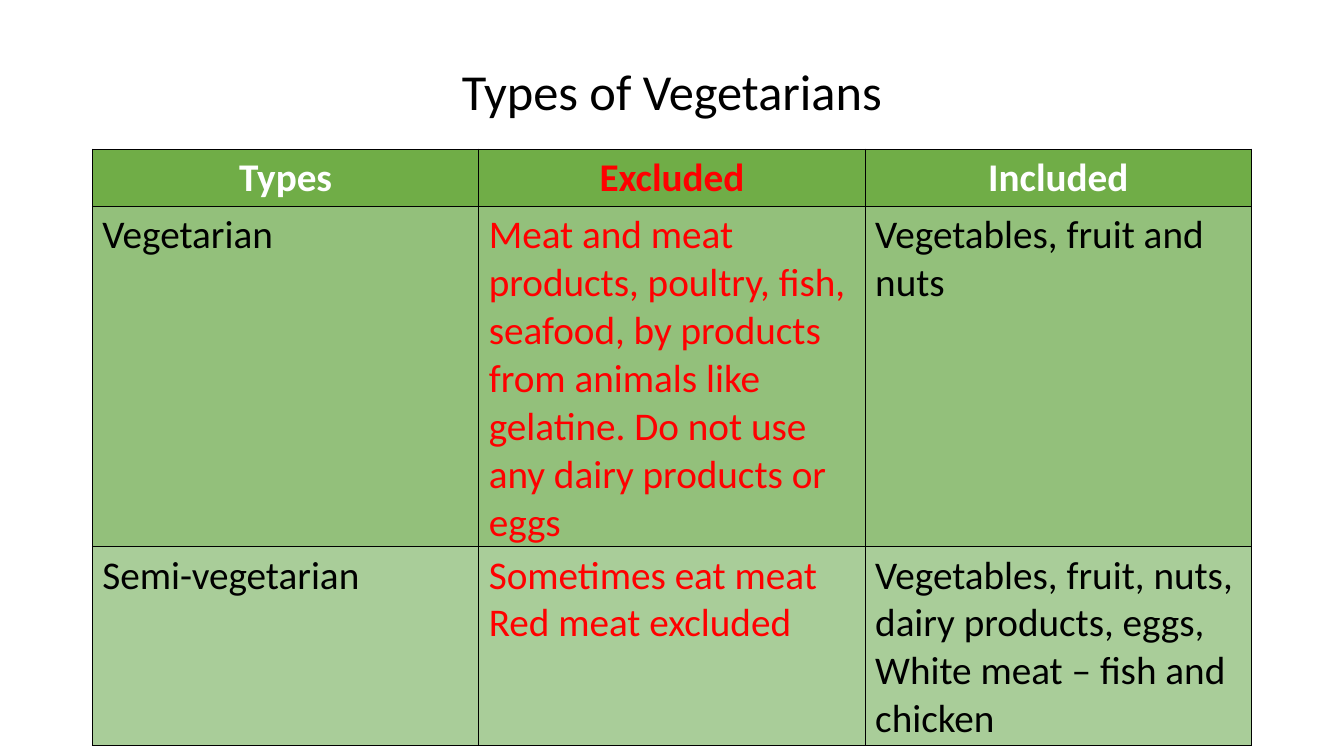
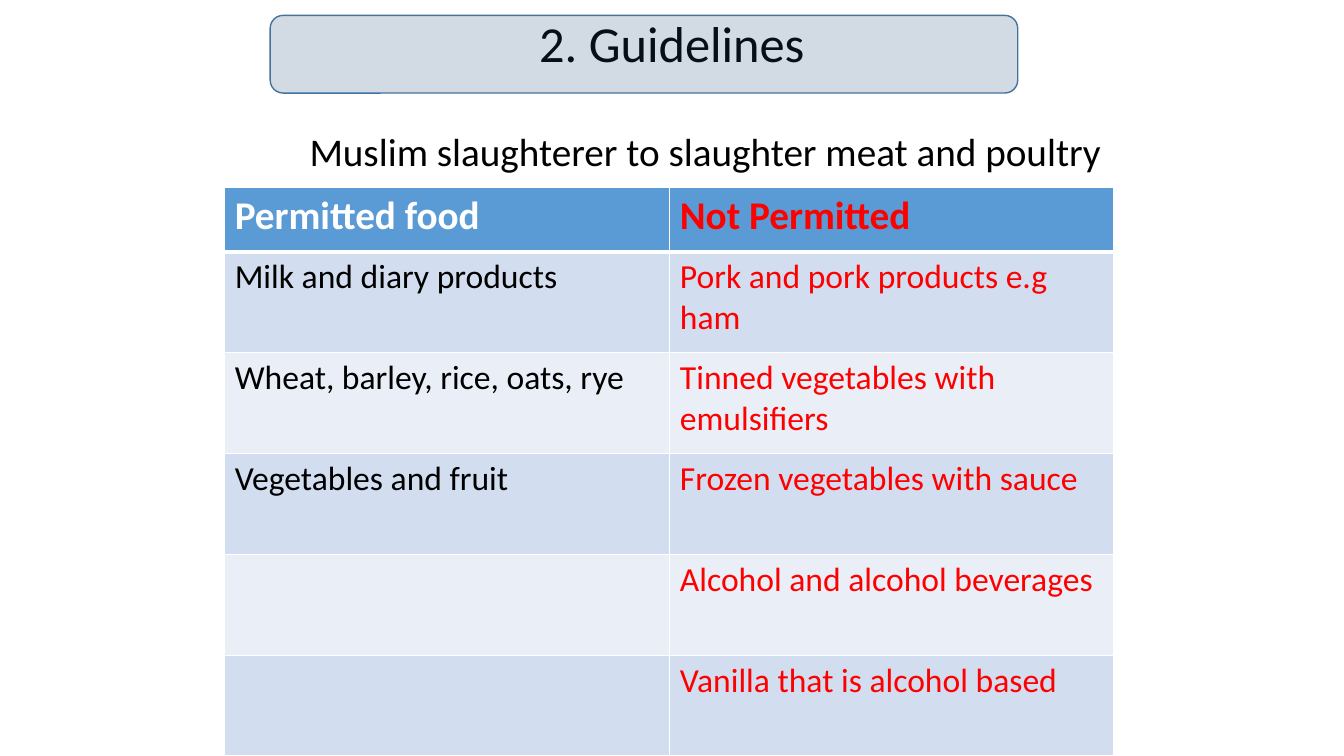
from lxml.etree import SubElement
from pptx import Presentation
from pptx.dml.color import RGBColor
from pptx.enum.shapes import MSO_SHAPE as Shape
from pptx.enum.text import MSO_ANCHOR as Anchor, PP_ALIGN as Align
from pptx.oxml.ns import qn
from pptx.util import Pt

FONT = "Calibri"
BLACK, WHITE, RED = "000000", "FFFFFF", "FF0000"
GREEN, GREEN_BANDS = "70AD47", ("93C07B", "A9CD99")
BLUE, BLUE_BANDS = "5B9BD5", ("D2DEEF", "EAEFF7")
NAVY, STEEL = "1F4E79", "43739E"
EXCLUDED_COLUMN = 1

VEGETARIANS = [
    ("Types", "Excluded", "Included"),
    ("Vegetarian",
     "Meat and meat products, poultry, fish, seafood, by products from "
     "animals like gelatine. Do not use any dairy products or eggs",
     "Vegetables, fruit and nuts"),
    ("Semi-vegetarian",
     "Sometimes eat meat\nRed meat excluded",
     "Vegetables, fruit, nuts, dairy products, eggs, "
     "White meat – fish and chicken"),
]
GUIDELINES = [
    ("Permitted food", "Not Permitted"),
    ("Milk and diary products", "Pork and pork products e.g ham"),
    ("Wheat, barley, rice, oats, rye", "Tinned vegetables with emulsifiers"),
    ("Vegetables and fruit", "Frozen vegetables with sauce"),
    ("", "Alcohol and alcohol beverages"),
    ("", "Vanilla that is alcohol based"),
]


def color(value):
    return RGBColor.from_string(value)


def fill(target, value):
    target.fill.solid()
    target.fill.fore_color.rgb = color(value)


def write(frame, text, size, ink, align=Align.LEFT, bold=False):
    frame.text = text
    for paragraph in frame.paragraphs:
        paragraph.alignment = align
        font = paragraph.font
        font.name, font.size, font.bold = FONT, Pt(size), bold
        font.color.rgb = color(ink)


def add_text(slide, box, text, size, align=Align.LEFT, anchor=Anchor.TOP):
    frame = slide.shapes.add_textbox(*map(Pt, box)).text_frame
    frame.word_wrap = True
    frame.vertical_anchor = anchor
    write(frame, text, size, BLACK, align)
    frame.paragraphs[0].line_spacing = 0.9
    return frame


def add_title(slide, top, height, text):
    add_text(slide, (66, top, 828, height), text, 36, Align.CENTER,
             Anchor.MIDDLE)


def set_borders(cell, value, bottom, top):
    properties = cell._tc.get_or_add_tcPr()
    for side, width in (("L", 1), ("R", 1), ("T", top), ("B", bottom)):
        line = SubElement(properties, qn(f"a:ln{side}"), w=str(Pt(width)))
        solid = SubElement(line, qn("a:solidFill"))
        SubElement(solid, qn("a:srgbClr"), val=value)


def add_food_table(slide, left, top, widths, heights, rows, head, bands,
                   border, head_rule, head_align, body_size):
    """Table with a bold head, banded rows and a red column of excluded food."""
    frame = slide.shapes.add_table(len(rows), len(widths), Pt(left), Pt(top),
                                   Pt(sum(widths)), Pt(sum(heights)))
    table = frame.table
    for column, width in zip(table.columns, widths):
        column.width = Pt(width)
    for r, (texts, height) in enumerate(zip(rows, heights)):
        table.rows[r].height = Pt(height)
        is_head = r == 0
        for c, text in enumerate(texts):
            cell = table.cell(r, c)
            set_borders(cell, border, head_rule if is_head else 1,
                        head_rule if r == 1 else 1)
            fill(cell, head if is_head else bands[(r - 1) % 2])
            ink = WHITE if is_head else BLACK
            write(cell.text_frame, text, 28 if is_head else body_size,
                  RED if c == EXCLUDED_COLUMN else ink,
                  head_align if is_head else Align.LEFT, is_head)


def add_title_veil(slide, box, opacity):
    """Translucent rounded box laid over the title."""
    veil = slide.shapes.add_shape(Shape.ROUNDED_RECTANGLE, *map(Pt, box))
    veil.shadow.inherit = False
    fill(veil, NAVY)
    tint = veil._element.spPr.find(qn("a:solidFill"))[0]
    SubElement(tint, qn("a:alpha"), val=str(opacity * 1000))
    veil.line.color.rgb = color(STEEL)
    veil.line.width = Pt(1)


def build_vegetarians(slide):
    add_title(slide, 29, 77, "Types of Vegetarians")
    add_food_table(slide, 66, 106.5, [276] * 3, [41, 243, 142], VEGETARIANS,
                   GREEN, GREEN_BANDS, BLACK, 1, Align.CENTER, 28)


def build_guidelines(slide):
    add_title(slide, 0, 66, "2. Guidelines")
    rule = add_text(slide, (142, 91, 666, 449),
                    "Muslim slaughterer to slaughter meat and poultry", 28)
    rule.paragraphs[0]._p.get_or_add_pPr().set("marL", str(Pt(72)))
    add_food_table(slide, 160.5, 133.5, [318, 317], [46.5] + [72] * 5,
                   GUIDELINES, BLUE, BLUE_BANDS, WHITE, 3, Align.LEFT, 24)
    add_title_veil(slide, (193, 11, 534, 55.5), 20)


def main():
    presentation = Presentation()
    presentation.slide_width, presentation.slide_height = Pt(960), Pt(540)
    for build in (build_vegetarians, build_guidelines):
        build(presentation.slides.add_slide(presentation.slide_layouts[6]))
    presentation.save("out.pptx")


if __name__ == "__main__":
    main()
